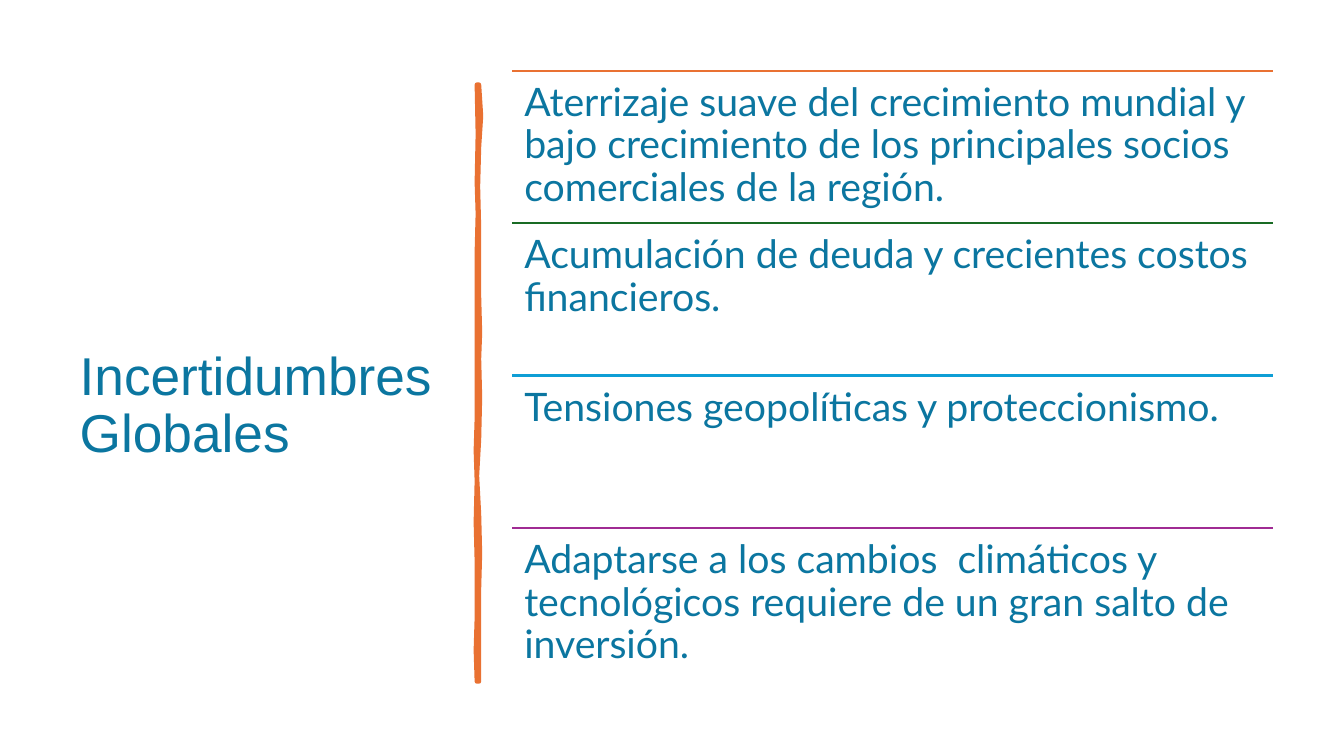
from pptx import Presentation
from pptx.dml.color import RGBColor
from pptx.enum.shapes import MSO_CONNECTOR
from pptx.enum.text import MSO_ANCHOR, MSO_AUTO_SIZE, PP_ALIGN
from pptx.oxml.ns import qn
from pptx.util import Inches, Pt
from lxml.etree import SubElement

TITLE = "Incertidumbres Globales"
RISKS = [
    ("Aterrizaje suave del crecimiento mundial y bajo crecimiento de los "
     "principales socios comerciales de la región.", "E97132"),
    ("Acumulación de deuda y crecientes costos financieros.", "196B24"),
    ("Tensiones geopolíticas y proteccionismo.", "0F9ED5"),
    ("Adaptarse a los cambios  climáticos y tecnológicos requiere de un "
     "gran salto de inversión.", "A02B93"),
]
INK, ORANGE = "0B76A0", "E97132"
LEFT, TOP, WIDTH, HEIGHT = 5.08, 0.7, 7.55, 6.05
STEP = HEIGHT / len(RISKS)
EDGE = [
    (4.75, 0.84), (4.77, 1.15), (4.75, 1.46), (4.74, 1.85), (4.75, 2.26),
    (4.75, 2.94), (4.76, 3.3), (4.75, 3.56), (4.76, 3.94), (4.75, 4.36),
    (4.73, 4.72), (4.75, 5.1), (4.76, 5.49), (4.75, 5.84), (4.75, 6.76),
    (4.73, 6.76), (4.72, 6.45), (4.73, 6.13), (4.73, 5.57), (4.72, 5.18),
    (4.73, 4.77), (4.72, 4.47), (4.73, 4.15), (4.73, 3.35), (4.73, 2.5),
    (4.74, 2.12), (4.73, 1.81), (4.74, 1.33), (4.73, 0.84),
]


def color(code):
    return RGBColor.from_string(code)


def write(frame, text, size, font):
    frame.word_wrap = True
    frame.auto_size = MSO_AUTO_SIZE.NONE
    para = frame.paragraphs[0]
    para.alignment = PP_ALIGN.LEFT
    para.line_spacing = 0.9
    run = para.add_run()
    run.text = text
    run.font.size = Pt(size)
    run.font.name = font
    run.font.color.rgb = color(INK)


def add_bar(shapes):
    first, *rest = [(Inches(x), Inches(y)) for x, y in EDGE]
    pen = shapes.build_freeform(*first)
    pen.add_line_segments(rest, close=True)
    bar = pen.convert_to_shape()
    bar.shadow.inherit = False
    bar.fill.solid()
    bar.fill.fore_color.rgb = color(ORANGE)
    bar.line.color.rgb = color(ORANGE)
    bar.line.width = Pt(3.25)


def add_risk(shapes, top, text, tint):
    x, y, width = Inches(LEFT), Inches(top), Inches(WIDTH)
    rule = shapes.add_connector(MSO_CONNECTOR.STRAIGHT, x, y, x + width, y)
    rule.line.color.rgb = color(tint)
    rule.line.width = Pt(1.5)
    SubElement(rule._element.spPr, qn("a:effectLst"))
    frame = shapes.add_textbox(x, y, width, Inches(STEP)).text_frame
    frame.margin_left = frame.margin_right = Inches(0.12)
    frame.margin_top = frame.margin_bottom = Inches(0.12)
    write(frame, text, 28, "Lato")


def main():
    deck = Presentation()
    deck.slide_width, deck.slide_height = Inches(13.33), Inches(7.5)
    shapes = deck.slides.add_slide(deck.slide_layouts[5]).shapes
    title = shapes.title
    title.left, title.top = Inches(0.69), Inches(0.98)
    title.width, title.height = Inches(3.74), Inches(6.11)
    title.text_frame.vertical_anchor = MSO_ANCHOR.MIDDLE
    write(title.text_frame, TITLE, 38, "Arial")
    add_bar(shapes)
    for row, (text, tint) in enumerate(RISKS):
        add_risk(shapes, TOP + row * STEP, text, tint)
    deck.save("out.pptx")


if __name__ == "__main__":
    main()
